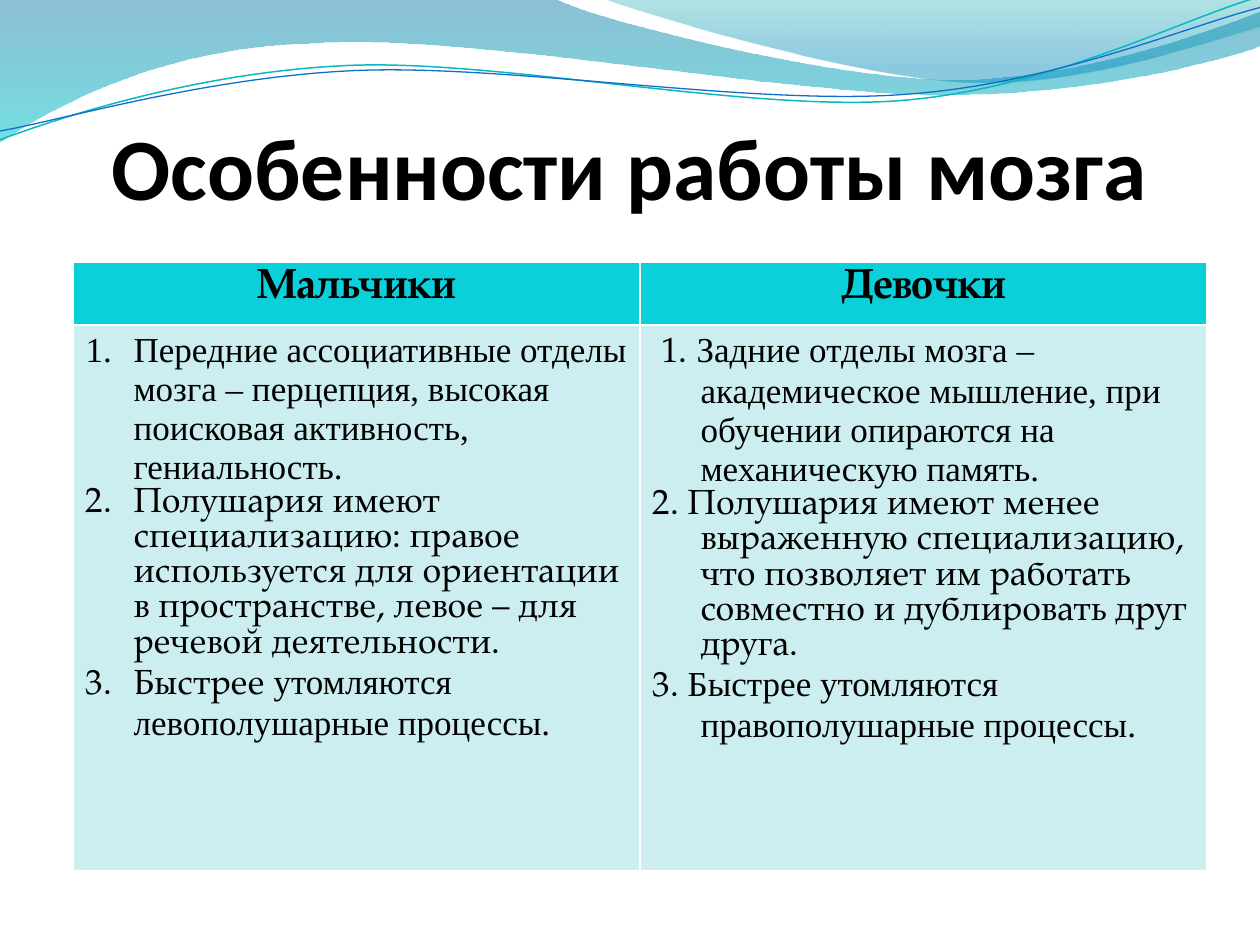
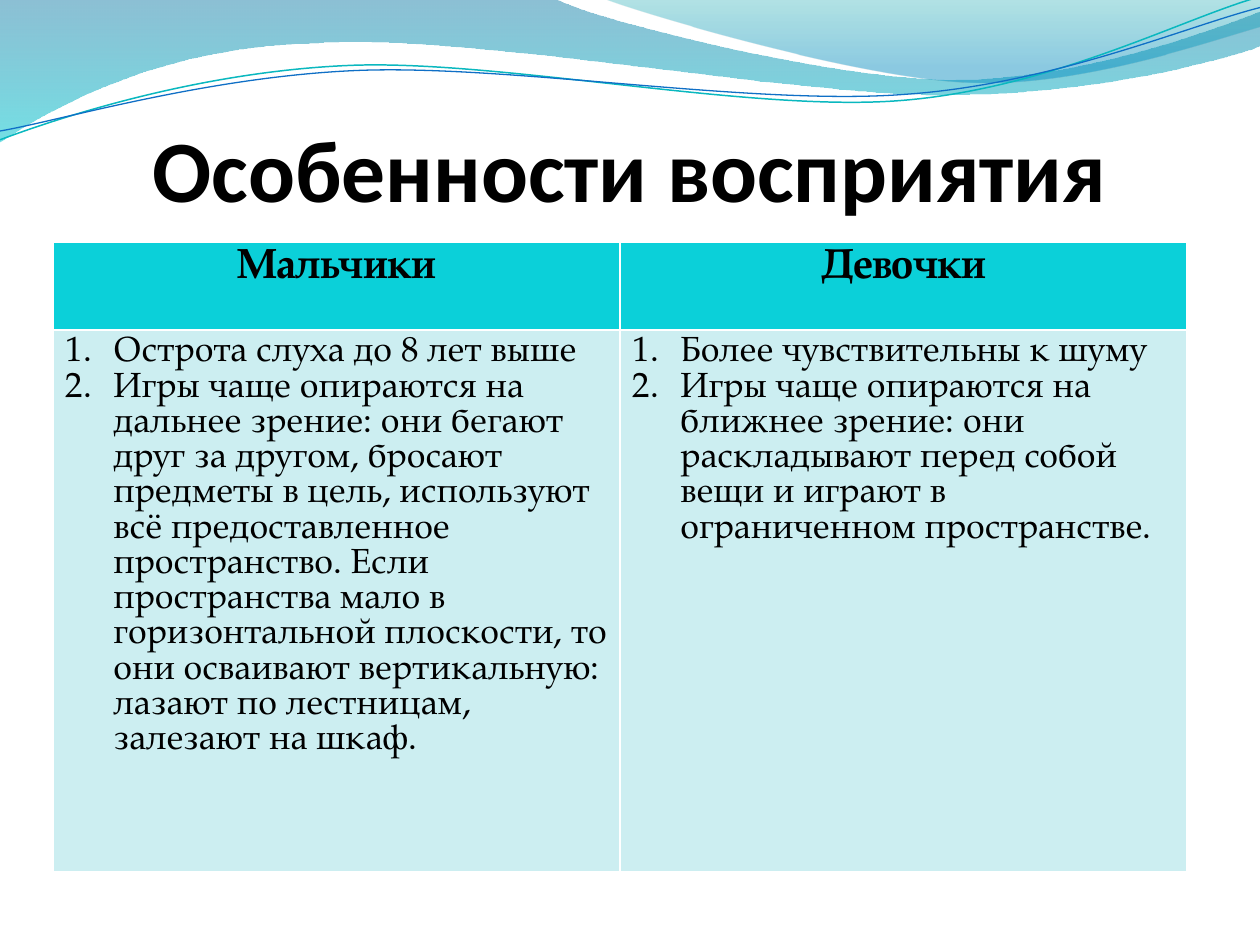
from dataclasses import dataclass
from typing import NamedTuple

from lxml.etree import SubElement
from pptx import Presentation
from pptx.dml.color import RGBColor
from pptx.enum.text import MSO_ANCHOR, PP_ALIGN
from pptx.oxml.ns import qn
from pptx.util import Inches, Pt

SERIF = "TeX Gyre Pagella"
TIMES = "Times New Roman"
TITLE_FONT = "Calibri"
BLACK = "000000"
HEADER_FILL = "0BD0D9"
BODY_FILL = "CCEEF1"
LIST_INDENT = Inches(0.38)


class Stop(NamedTuple):
    position: float
    color: str
    opacity: int


class Piece(NamedTuple):
    text: str
    font: str = SERIF


@dataclass
class Wave:
    """An outline whose segments hold one point (line) or three (Bézier curve)."""
    start: tuple[float, float]
    segments: list[list[tuple[float, float]]]
    stops: tuple[Stop, ...] = ()
    line_color: str = ""
    line_width: float = 0


@dataclass
class Column:
    heading: str
    items: list[list[Piece]]
    numbered: bool = True


@dataclass
class Comparison:
    title: str
    title_top: float
    table_left: float
    table_top: float
    row_heights: tuple[float, float]
    columns: list[Column]
    heading_space: float = 0


WAVES = [
    Wave((0, 0), [
        [(4.4, -0.01)],
        [(4.76, 0.17), (6.64, 0.63), (7.58, 0.63)],
        [(8.53, 0.63), (9.58, 0.26), (10, 0.09)],
        [(10.01, 0.36)],
        [(9.83, 0.44), (8.7, 0.76), (7.46, 0.75)],
        [(6.22, 0.75), (3.82, 0.28), (2.57, 0.34)],
        [(1.29, 0.36), (0.46, 0.83), (-0.01, 1.13)],
    ], stops=(Stop(0, "0074A1", 45), Stop(1, "00C6CF", 55))),
    Wave((4.79, -0.01), [
        [(5.09, 0.11), (6.82, 0.62), (7.69, 0.65)],
        [(8.56, 0.69), (9.61, 0.32), (10, 0.21)],
        [(10, 0)],
    ], stops=(Stop(0, "00A1A9", 30), Stop(0.8, "008BBF", 45))),
    Wave((0, 1.11), [
        [(0.48, 0.93), (1.58, 0.57), (2.77, 0.52)],
        [(3.95, 0.47), (5.93, 0.89), (7.13, 0.8)],
        [(8.33, 0.71), (9.38, 0.15), (9.98, -0.02)],
    ], line_color="0AB8BF", line_width=0.85),
    Wave((0, 1.04), [
        [(0.47, 0.96), (1.64, 0.61), (2.83, 0.56)],
        [(4.03, 0.51), (5.97, 0.84), (7.17, 0.75)],
        [(8.36, 0.67), (9.41, 0.21), (10, 0.06)],
    ], line_color="0F6FC6", line_width=0.75),
]

COMPARISONS = [
    Comparison("Особенности работы мозга", 0.75, 0.58, 2.08, (0.47, 4.33), [
        Column("Мальчики", [
            [Piece("Передние ассоциативные отделы мозга – перцепция, высокая "
                   "поисковая активность, гениальность.", TIMES)],
            [Piece("Полушария имеют специализацию: правое используется для "
                   "ориентации в пространстве, левое – для речевой деятельности.")],
            [Piece("Быстрее "), Piece("утомляются левополушарные процессы.", TIMES)],
        ]),
        Column("Девочки", [
            [Piece(" 1. "),
             Piece("Задние отделы мозга – академическое мышление, при обучении "
                   "опираются на механическую память.", TIMES)],
            [Piece("2. Полушария имеют менее выраженную специализацию, что "
                   "позволяет им работать совместно и дублировать друг друга.")],
            [Piece("3. "),
             Piece("Быстрее утомляются правополушарные процессы.", TIMES)],
        ], numbered=False),
    ]),
    Comparison("Особенности восприятия", 0.77, 0.42, 1.92, (0.7, 4.3), [
        Column("Мальчики", [
            [Piece("Острота слуха до 8 лет выше")],
            [Piece("Игры чаще опираются на дальнее зрение: они бегают друг за "
                   "другом, бросают предметы в цель, используют всё "
                   "предоставленное пространство. Если пространства мало в "
                   "горизонтальной плоскости, то они осваивают вертикальную: "
                   "лазают по лестницам, залезают на шкаф.")],
        ]),
        Column("Девочки", [
            [Piece("Более чувствительны к шуму")],
            [Piece("Игры чаще опираются на ближнее зрение: они раскладывают "
                   "перед собой вещи и играют в ограниченном пространстве.")],
        ]),
    ], heading_space=6),
]


def rgb(color: str) -> RGBColor:
    return RGBColor.from_string(color)


def add_text(paragraph, text: str, *, font: str = SERIF, size: float = 20,
             bold: bool = False, color: str = BLACK) -> None:
    run = paragraph.add_run()
    run.text = text
    run.font.name = font
    run.font.size = Pt(size)
    run.font.bold = bold
    run.font.color.rgb = rgb(color)


def bend_segments(shape, segments: list[list[tuple[float, float]]]) -> None:
    """Turn straight segments into Bézier curves where control points are given."""
    lines = list(shape.element.iter(qn("a:lnTo")))
    for line, segment in zip(lines, segments):
        if len(segment) == 1:
            continue
        curve = line.makeelement(qn("a:cubicBezTo"))
        for x, y in segment:
            SubElement(curve, qn("a:pt"), x=str(Inches(x) - shape.left),
                       y=str(Inches(y) - shape.top))
        line.getparent().replace(line, curve)


def fill_gradient(shape, stops: tuple[Stop, ...]) -> None:
    """Apply a top-to-bottom gradient of half-transparent colours."""
    shape.fill.gradient()
    shape.fill.gradient_angle = 270
    for gradient_stop, stop in zip(shape.fill.gradient_stops, stops):
        gradient_stop.position = stop.position
        gradient_stop.color.rgb = rgb(stop.color)
    for color, stop in zip(shape.element.spPr.iter(qn("a:srgbClr")), stops):
        SubElement(color, qn("a:alpha"), val=str(stop.opacity * 1000))


def add_wave(slide, wave: Wave):
    builder = slide.shapes.build_freeform(*map(Inches, wave.start))
    ends = [tuple(map(Inches, segment[-1])) for segment in wave.segments]
    builder.add_line_segments(ends, close=bool(wave.stops))
    shape = builder.convert_to_shape()
    bend_segments(shape, wave.segments)
    shape.shadow.inherit = False
    if wave.stops:
        fill_gradient(shape, wave.stops)
        shape.line.fill.background()
    else:
        shape.fill.background()
        shape.line.color.rgb = rgb(wave.line_color)
        shape.line.width = Pt(wave.line_width)
    return shape


def add_shared_waves(slide) -> None:
    """Draw the waves once and hand them to the layout of the slide."""
    layout_tree = slide.slide_layout.shapes.element
    for wave in WAVES:
        layout_tree.append(add_wave(slide, wave).element)


def add_title(slide, text: str, top: float) -> None:
    box = slide.shapes.add_textbox(Inches(0.5), Inches(top), Inches(9), Inches(0.98))
    frame = box.text_frame
    frame.word_wrap = True
    frame.vertical_anchor = MSO_ANCHOR.BOTTOM
    frame.margin_left = frame.margin_right = frame.margin_bottom = 0
    frame.margin_top = Inches(0.05)
    paragraph = frame.paragraphs[0]
    paragraph.alignment = PP_ALIGN.CENTER
    add_text(paragraph, text, font=TITLE_FONT, size=50, bold=True)


def fill_cell(cell, color: str) -> None:
    cell.fill.solid()
    cell.fill.fore_color.rgb = rgb(color)


def write_items(cell, column: Column) -> None:
    frame = cell.text_frame
    for index, pieces in enumerate(column.items):
        paragraph = frame.add_paragraph() if index else frame.paragraphs[0]
        properties = paragraph._p.get_or_add_pPr()
        properties.set("marL", str(LIST_INDENT))
        properties.set("indent", str(-LIST_INDENT))
        if column.numbered:
            SubElement(properties, qn("a:buAutoNum"), type="arabicPeriod")
        for piece in pieces:
            add_text(paragraph, piece.text, font=piece.font)


def add_comparison_table(slide, comparison: Comparison) -> None:
    """Add the table; its white rules come from the default table style."""
    columns = comparison.columns
    table = slide.shapes.add_table(
        2, len(columns), Inches(comparison.table_left), Inches(comparison.table_top),
        Inches(9), Inches(sum(comparison.row_heights))).table
    for row, height in zip(table.rows, comparison.row_heights):
        row.height = Inches(height)
    for index, column in enumerate(columns):
        heading, body = table.cell(0, index), table.cell(1, index)
        fill_cell(heading, HEADER_FILL)
        fill_cell(body, BODY_FILL)
        paragraph = heading.text_frame.paragraphs[0]
        paragraph.alignment = PP_ALIGN.CENTER
        if comparison.heading_space:
            paragraph.space_before = Pt(comparison.heading_space)
        add_text(paragraph, column.heading, size=24, bold=True)
        write_items(body, column)


def main() -> None:
    presentation = Presentation()
    presentation.slide_width = Inches(10)
    presentation.slide_height = Inches(7.5)
    blank_layout = presentation.slide_layouts[6]
    slides = [presentation.slides.add_slide(blank_layout) for _ in COMPARISONS]
    add_shared_waves(slides[0])
    for slide, comparison in zip(slides, COMPARISONS):
        add_title(slide, comparison.title, comparison.title_top)
        add_comparison_table(slide, comparison)
    presentation.save("out.pptx")


if __name__ == "__main__":
    main()
